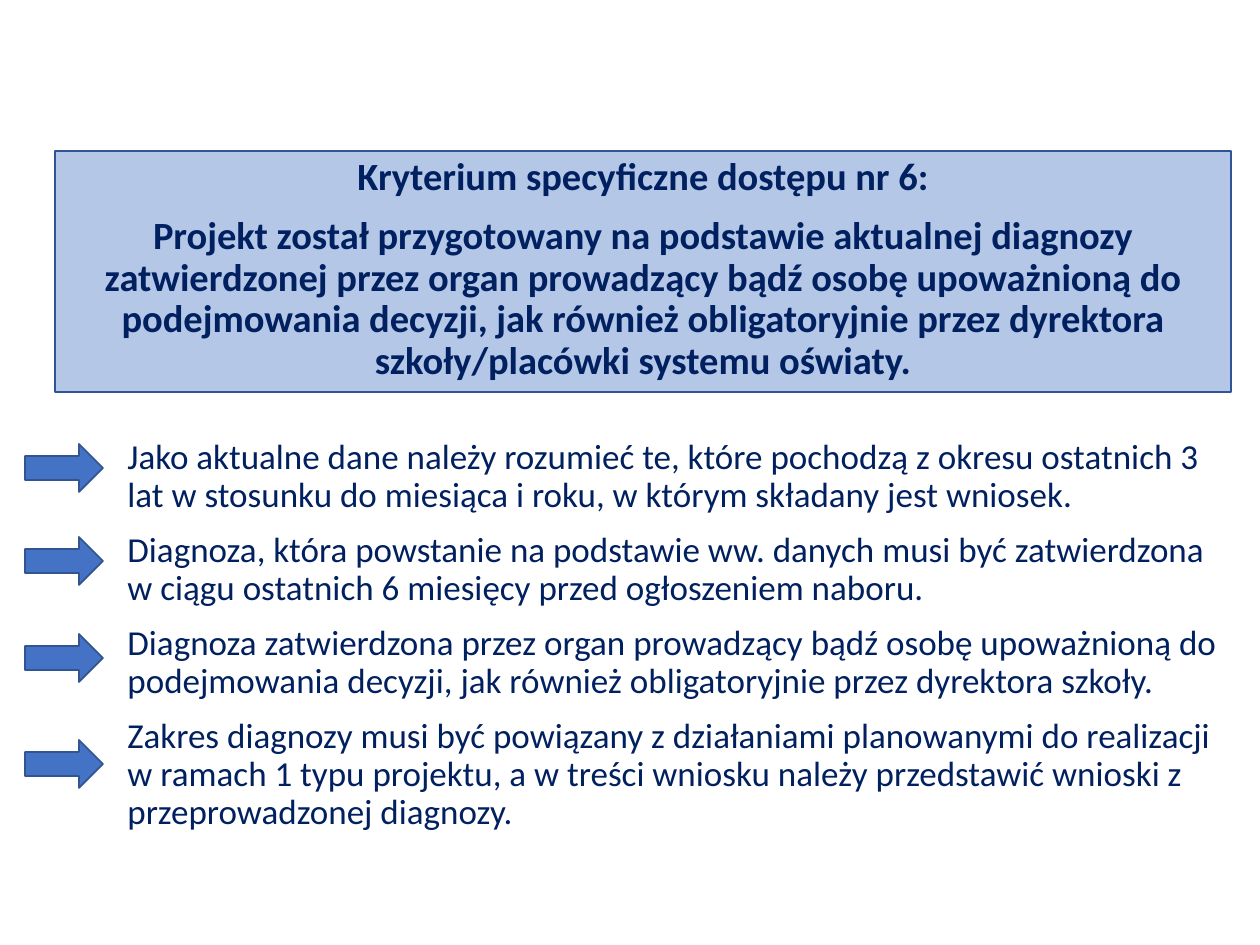
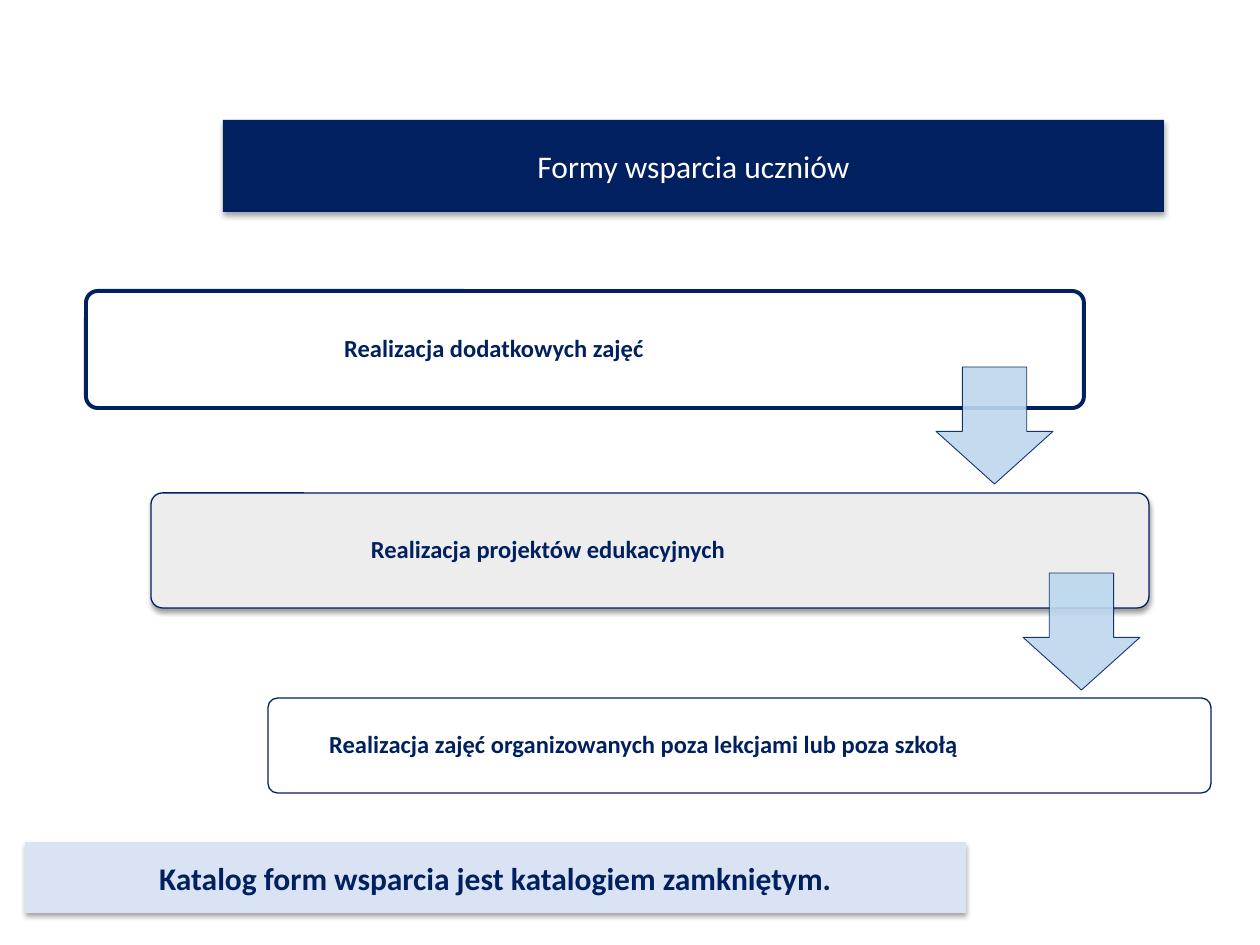
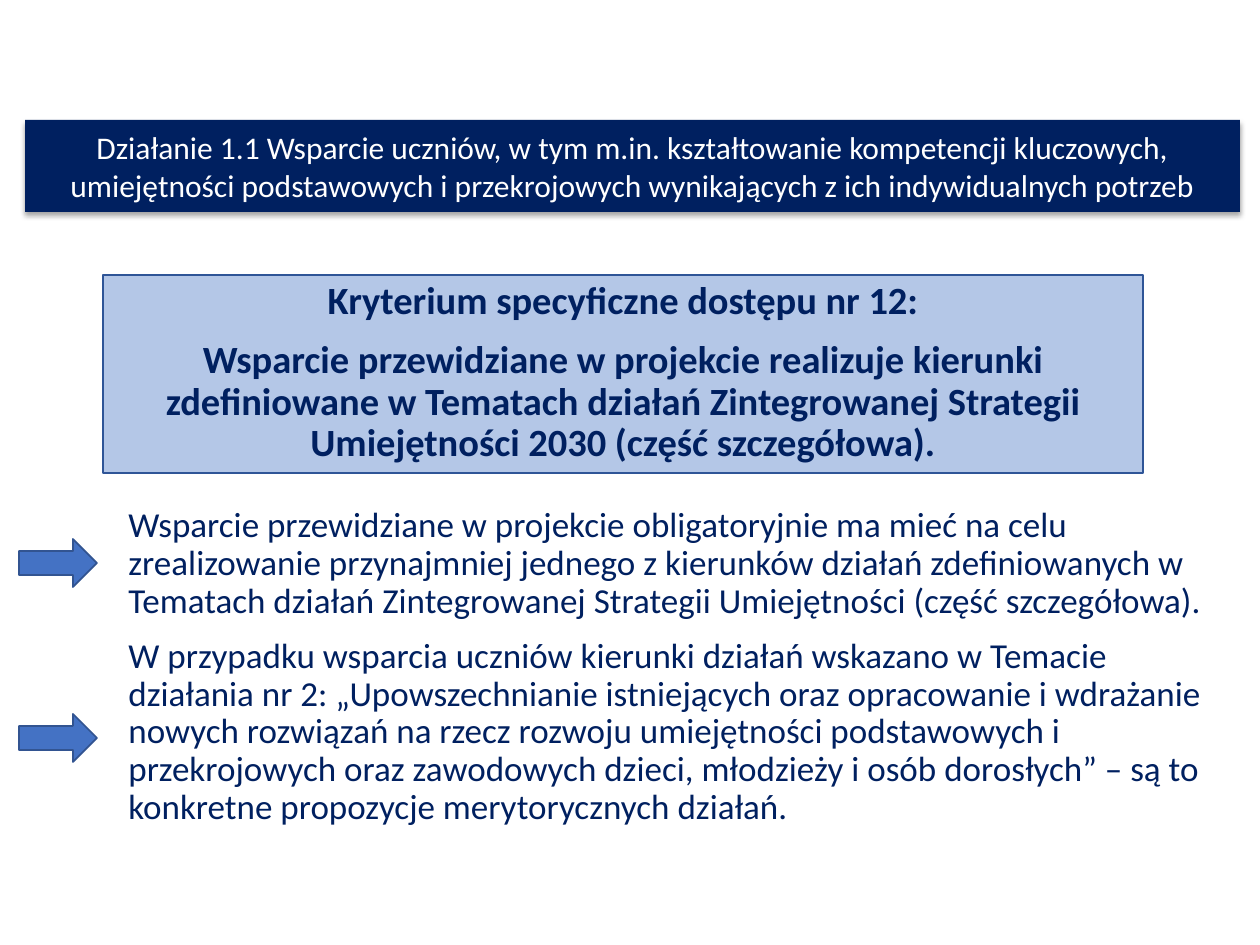
from lxml.etree import SubElement
from pptx import Presentation
from pptx.dml.color import RGBColor
from pptx.enum.shapes import MSO_SHAPE
from pptx.enum.text import MSO_ANCHOR, PP_ALIGN
from pptx.oxml.ns import qn
from pptx.util import Pt

SCALE = 914400 / 126
FONT = "Calibri"
NAVY = "002060"
WHITE = "FFFFFF"
PALE = "DAE3F3"
SKY = "BDD7EE"
GREY = "EDEDED"
BLUE = "4472C4"
BLUE_EDGE = "325491"
PANEL = "B4C7E7"
PANEL_EDGE = "2F5597"


def px(num):
    return round(num * SCALE)


def tint(code):
    return RGBColor.from_string(code)


def place(box):
    return [px(num) for num in box]


def draw(slide, kind, box, fill=None, edge=None, width=1):
    shape = slide.shapes.add_shape(kind, *place(box))
    shape.shadow.inherit = False
    if fill:
        shape.fill.solid()
        shape.fill.fore_color.rgb = tint(fill)
    else:
        shape.fill.background()
    if edge:
        shape.line.color.rgb = tint(edge)
        shape.line.width = Pt(width)
    else:
        shape.line.fill.background()
    return shape


def shade(shape, alpha=35, gap=1.8):
    effects = shape._element.spPr.find(qn("a:effectLst"))
    outer = SubElement(effects, qn("a:outerShdw"), blurRad=str(Pt(3.1)),
                       dist=str(Pt(gap)), dir="5400000", rotWithShape="0")
    color = SubElement(outer, qn("a:srgbClr"), val="000000")
    SubElement(color, qn("a:alpha"), val=str(alpha * 1000))


def fade(shape, alpha):
    for color in shape._element.spPr.iter(qn("a:srgbClr")):
        SubElement(color, qn("a:alpha"), val=str(alpha * 1000))


def write(shape, lines, size, color=NAVY, bold=False, align=PP_ALIGN.CENTER,
          anchor=MSO_ANCHOR.MIDDLE, pitch=0.9):
    frame = shape.text_frame
    frame.word_wrap = True
    frame.vertical_anchor = anchor
    for i, line in enumerate(lines):
        para = frame.add_paragraph() if i else frame.paragraphs[0]
        para.text = line
        para.alignment = align
        para.line_spacing = pitch
        if i:
            para.space_before = Pt(10)
        para.font.name = FONT
        para.font.size = Pt(size)
        para.font.bold = bold
        para.font.color.rgb = tint(color)


def banner(slide, box, text, fill=NAVY, color=WHITE, bold=False):
    shape = draw(slide, MSO_SHAPE.RECTANGLE, box, fill)
    shade(shape)
    write(shape, [text], 18, color, bold, pitch=1.0)


def panel(slide, box, lines):
    shape = draw(slide, MSO_SHAPE.RECTANGLE, box, PANEL, PANEL_EDGE, 0.75)
    write(shape, lines, 22, bold=True, anchor=MSO_ANCHOR.TOP)


def body(slide, box, lines):
    shape = slide.shapes.add_textbox(*place(box))
    write(shape, lines, 20, align=PP_ALIGN.LEFT, anchor=MSO_ANCHOR.TOP)


def markers(slide, left, tops):
    for top in tops:
        draw(slide, MSO_SHAPE.RIGHT_ARROW, (left, top, 78, 48), BLUE, BLUE_EDGE)


def card(slide, box, span, text, fill=None, width=0.75):
    shape = draw(slide, MSO_SHAPE.ROUNDED_RECTANGLE, box, fill, NAVY, width)
    shape.adjustments[0] = 0.1
    left, top, _, height = box
    label = slide.shapes.add_textbox(
        *place((left + 4, top + 4, span, height - 8)))
    frame = label.text_frame
    frame.margin_left = frame.margin_right = px(8)
    frame.margin_top = frame.margin_bottom = px(8)
    write(label, [text], 14, bold=True)
    return shape


def step(slide, left, top):
    shape = draw(slide, MSO_SHAPE.DOWN_ARROW, (left, top, 117, 117),
                 SKY, NAVY, 0.5)
    shape.adjustments[0] = 0.55
    shape.adjustments[1] = 0.45
    fade(shape, 90)


def needs(slide):
    body(slide, (115, 433, 1116, 412), [
        "Jako aktualne dane należy rozumieć te, które pochodzą z okresu "
        "ostatnich 3 lat w stosunku do miesiąca i roku, w którym składany "
        "jest wniosek.",
        "Diagnoza, która powstanie na podstawie ww. danych musi być "
        "zatwierdzona w ciągu ostatnich 6 miesięcy przed ogłoszeniem naboru.",
        "Diagnoza zatwierdzona przez organ prowadzący bądź osobę upoważnioną "
        "do podejmowania decyzji, jak również obligatoryjnie przez dyrektora "
        "szkoły.",
        "Zakres diagnozy musi być powiązany z działaniami planowanymi do "
        "realizacji w ramach 1 typu projektu, a w treści wniosku należy "
        "przedstawić wnioski z przeprowadzonej diagnozy.",
    ])
    panel(slide, (55, 151, 1176, 241), [
        "Kryterium specyficzne dostępu nr 6:",
        "Projekt został przygotowany na podstawie aktualnej diagnozy "
        "zatwierdzonej przez organ prowadzący bądź osobę upoważnioną do "
        "podejmowania decyzji, jak również obligatoryjnie przez dyrektora "
        "szkoły/placówki systemu oświaty.",
    ])
    markers(slide, 25, (444, 537, 634, 740))


def forms(slide):
    card(slide, (86, 291, 998, 117), 808, "Realizacja dodatkowych zajęć",
         width=2.25)
    middle = card(slide, (151, 493, 998, 115), 786,
                  "Realizacja projektów edukacyjnych", GREY)
    shade(middle, 38, 1.6)
    card(slide, (268, 698, 943, 95), 743,
         "Realizacja zajęć organizowanych poza lekcjami lub poza szkołą",
         WHITE)
    step(slide, 936, 367)
    step(slide, 1023, 573)
    banner(slide, (223, 120, 941, 92), "Formy wsparcia uczniów")
    banner(slide, (25, 842, 941, 71),
           "Katalog form wsparcia jest katalogiem zamkniętym.",
           PALE, NAVY, True)


def themes(slide):
    banner(slide, (25, 120, 1215, 92),
           "Działanie 1.1 Wsparcie uczniów, w tym m.in. kształtowanie "
           "kompetencji kluczowych, umiejętności podstawowych i przekrojowych "
           "wynikających z ich indywidualnych potrzeb")
    panel(slide, (103, 275, 1040, 198), [
        "Kryterium specyficzne dostępu nr 12:",
        "Wsparcie przewidziane w projekcie realizuje kierunki zdefiniowane w "
        "Tematach działań Zintegrowanej Strategii Umiejętności 2030 (część "
        "szczegółowa).",
    ])
    body(slide, (116, 501, 1100, 369), [
        "Wsparcie przewidziane w projekcie obligatoryjnie ma mieć na celu "
        "zrealizowanie przynajmniej jednego z kierunków działań "
        "zdefiniowanych w Tematach działań Zintegrowanej Strategii "
        "Umiejętności (część szczegółowa).",
        "W przypadku wsparcia uczniów kierunki działań wskazano w Temacie "
        "działania nr 2: „Upowszechnianie istniejących oraz opracowanie i "
        "wdrażanie nowych rozwiązań na rzecz rozwoju umiejętności "
        "podstawowych i przekrojowych oraz zawodowych dzieci, młodzieży i "
        "osób dorosłych” – są to konkretne propozycje merytorycznych działań.",
    ])
    markers(slide, 19, (539, 714))


def main():
    deck = Presentation()
    deck.slide_width = px(1260)
    deck.slide_height = px(945)
    for fill in (needs, forms, themes):
        fill(deck.slides.add_slide(deck.slide_layouts[6]))
    deck.save("out.pptx")


if __name__ == "__main__":
    main()
